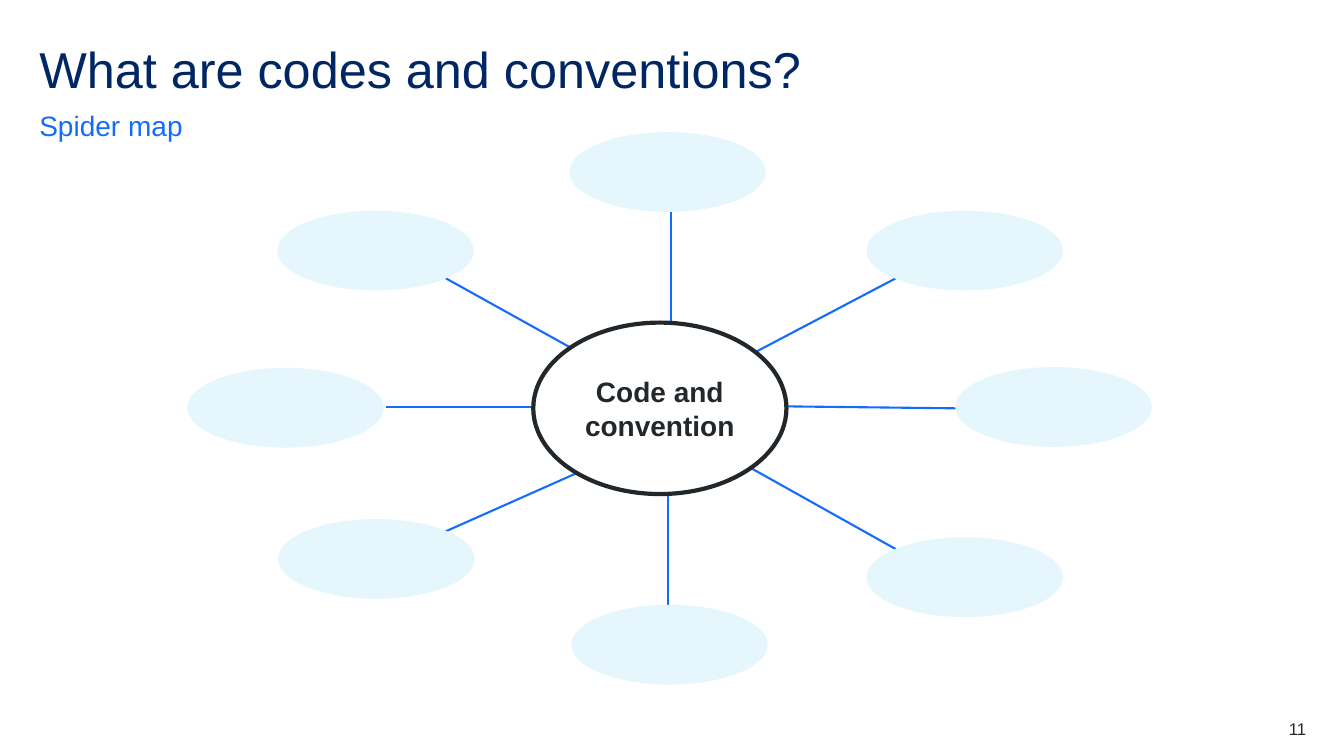
from dataclasses import dataclass

from lxml import etree
from pptx import Presentation
from pptx.dml.color import RGBColor
from pptx.enum import shapes, text
from pptx.oxml import ns
from pptx.util import Cm, Pt


@dataclass(frozen=True)
class Theme:
    font: str = "Arial"
    navy: str = "002664"
    blue: str = "146CFD"
    ink: str = "22272B"
    pale: str = "E5F7FC"
    white: str = "FFFFFF"
    title_size: int = 36
    label_size: int = 20
    number_size: int = 12
    spoke_width: float = 1.5
    hub_width: float = 3


THEME = Theme()
MARGIN, TEXT_WIDTH = 0.99, 31.9
HUB_BOX = (13.44, 8.13, 6.38, 4.32)
IDEA_SIZE = (4.95, 2.01)

# Spoke start at the hub, spoke end, top left corner of the idea (cm)
BRANCHES = [
    ((14.38, 10.26), (9.73, 10.26), (4.72, 9.27)),
    ((15.01, 11.71), (11.23, 13.39), (7.01, 13.08)),
    ((14.38, 8.76), (11.23, 7.01), (6.99, 5.31)),
    ((18.72, 11.68), (22.58, 13.84), (21.84, 13.54)),
    ((18.85, 8.97), (22.58, 7.01), (21.84, 5.31)),
    ((16.92, 8.23), (16.92, 5.31), (14.35, 3.33)),
    ((19.84, 10.24), (24.08, 10.29), (24.08, 9.25)),
    ((16.84, 12.42), (16.84, 15.34), (14.4, 15.24)),
]


def cm(*lengths):
    return [Cm(length) for length in lengths]


def color(name):
    return RGBColor.from_string(name)


def write(frame, words, size, ink, align, bold=False):
    frame.text = words
    frame.word_wrap = True
    paragraph = frame.paragraphs[0]
    paragraph.alignment = align
    font = paragraph.font
    font.name, font.size, font.bold = THEME.font, Pt(size), bold
    font.color.rgb = color(ink)
    return paragraph


def clear_insets(frame):
    frame.margin_left = frame.margin_top = 0
    frame.margin_right = frame.margin_bottom = 0


def fill_placeholder(holder, box, words, size, ink, spacing):
    holder.left, holder.top, holder.width, holder.height = cm(*box)
    frame = holder.text_frame
    clear_insets(frame)
    frame.auto_size = text.MSO_AUTO_SIZE.NONE
    frame.vertical_anchor = text.MSO_ANCHOR.BOTTOM
    paragraph = write(frame, words, size, ink, text.PP_ALIGN.LEFT)
    paragraph.line_spacing = spacing
    paragraph.space_before = Pt(0)
    return paragraph


def remove_bullet(paragraph):
    properties = paragraph._p.get_or_add_pPr()
    properties.set("marL", "0")
    properties.set("indent", "0")
    etree.SubElement(properties, ns.qn("a:buNone"))


def add_ellipse(group, box, fill):
    ellipse = group.shapes.add_shape(shapes.MSO_SHAPE.OVAL, *cm(*box))
    ellipse.shadow.inherit = False
    ellipse.fill.solid()
    ellipse.fill.fore_color.rgb = color(fill)
    ellipse.line.fill.background()
    return ellipse


def add_spoke(group, start, end):
    spoke = group.shapes.add_connector(
        shapes.MSO_CONNECTOR.STRAIGHT, *cm(*start, *end))
    spoke.line.color.rgb = color(THEME.blue)
    spoke.line.width = Pt(THEME.spoke_width)
    etree.SubElement(spoke._element.spPr, ns.qn("a:effectLst"))


def add_hub(group, words):
    hub = add_ellipse(group, HUB_BOX, THEME.white)
    hub.line.color.rgb = color(THEME.ink)
    hub.line.width = Pt(THEME.hub_width)
    hub.text_frame.vertical_anchor = text.MSO_ANCHOR.MIDDLE
    write(hub.text_frame, words, THEME.label_size, THEME.ink,
          text.PP_ALIGN.CENTER, bold=True)


def add_spider_map(slide, topic):
    spider = slide.shapes.add_group_shape()
    for start, end, _ in BRANCHES:
        add_spoke(spider, start, end)
    add_hub(spider, topic)
    for _, _, corner in BRANCHES:
        add_ellipse(spider, corner + IDEA_SIZE, THEME.pale)


def add_page_number(slide, number):
    frame = slide.shapes.add_textbox(*cm(30.91, 18.11, 2.01, 0.51)).text_frame
    clear_insets(frame)
    write(frame, number, THEME.number_size, THEME.ink, text.PP_ALIGN.RIGHT)


def main():
    deck = Presentation()
    deck.slide_width, deck.slide_height = cm(33.87, 19.05)
    slide = deck.slides.add_slide(deck.slide_layouts[1])

    title, subtitle = slide.placeholders
    fill_placeholder(title, (MARGIN, 0.99, TEXT_WIDTH, 1.52),
                     "What are codes and conventions?",
                     THEME.title_size, THEME.navy, 0.9)
    kind = fill_placeholder(subtitle, (MARGIN, 2.72, TEXT_WIDTH, 0.86),
                            "Spider map", THEME.label_size, THEME.blue, 1.5)
    remove_bullet(kind)

    add_spider_map(slide, "Code and convention")
    add_page_number(slide, "11")
    deck.save("out.pptx")


if __name__ == "__main__":
    main()
